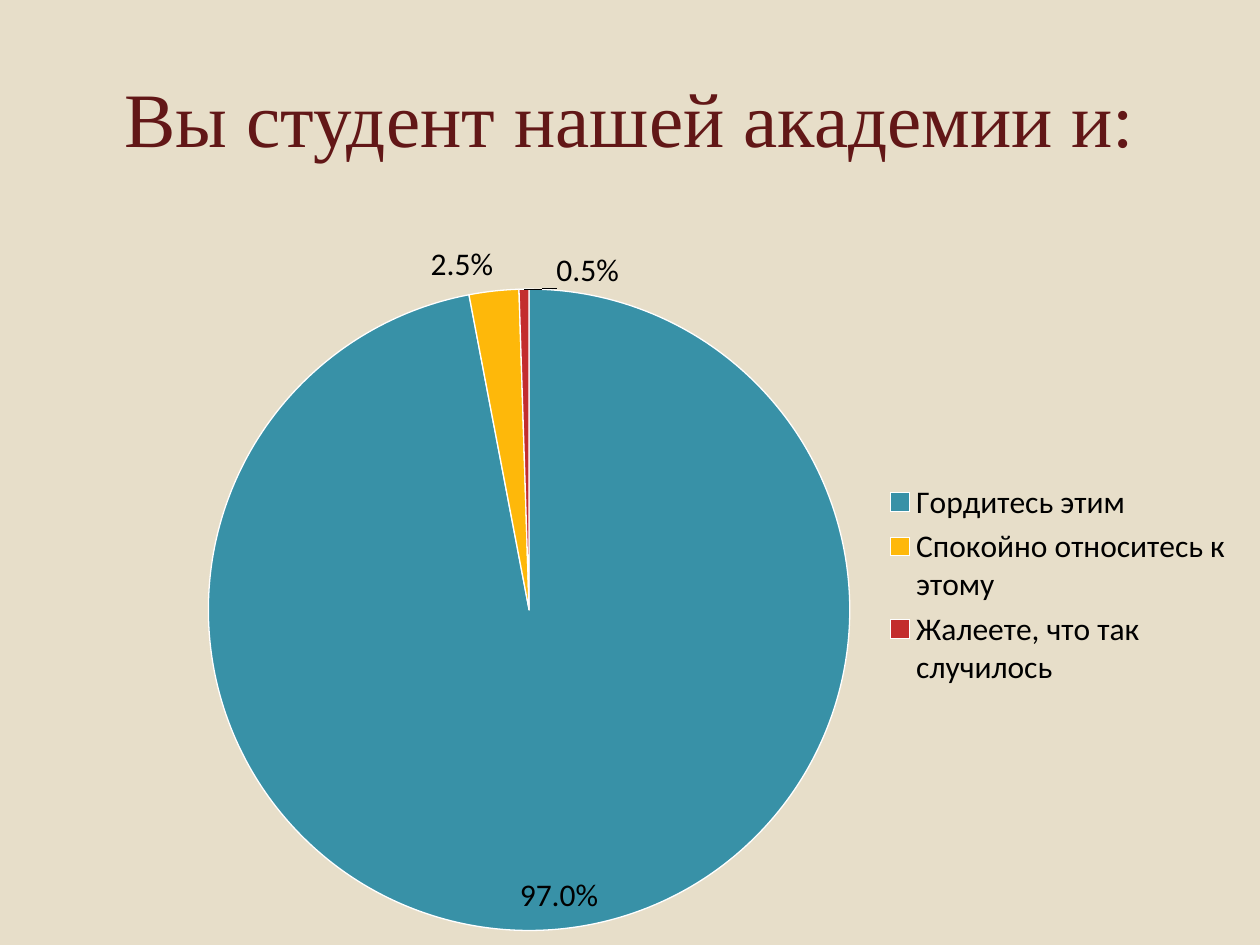
from lxml import etree
from pptx import Presentation
from pptx.chart.data import CategoryChartData
from pptx.dml.color import RGBColor
from pptx.enum.chart import XL_CHART_TYPE, XL_LABEL_POSITION, XL_LEGEND_POSITION
from pptx.enum.text import MSO_ANCHOR, PP_ALIGN
from pptx.oxml import parse_xml
from pptx.oxml.ns import nsdecls, qn
from pptx.util import Inches, Pt

PIE = XL_CHART_TYPE.PIE
BEST_FIT = XL_LABEL_POSITION.BEST_FIT
LEGEND_RIGHT = XL_LEGEND_POSITION.RIGHT
MIDDLE = MSO_ANCHOR.MIDDLE
CENTER = PP_ALIGN.CENTER

SAND = RGBColor(0xE7, 0xDE, 0xC9)
MAROON = RGBColor(0x62, 0x17, 0x17)
TEAL = RGBColor(0x38, 0x91, 0xA7)
AMBER = RGBColor(0xFE, 0xB8, 0x0A)
RED = RGBColor(0xC3, 0x2D, 0x2E)
WHITE = RGBColor(0xFF, 0xFF, 0xFF)
BLACK = RGBColor(0, 0, 0)

PERCENT = "0.0%"
ANSWERS = [
    ("Гордитесь этим", 97, TEAL),
    ("Спокойно относитесь к этому", 2.5, AMBER),
    ("Жалеете, что так случилось", 0.5, RED),
]


def style_font(font, name, size, color):
    font.name = name
    font.size = Pt(size)
    font.color.rgb = color


def manual_layout(**settings):
    """Return a c:layout element; positions are shares of the chart."""
    items = "".join(f'<c:{tag} val="{value}"/>' for tag, value in settings.items())
    return parse_xml(
        f'<c:layout {nsdecls("c")}><c:manualLayout>{items}</c:manualLayout></c:layout>'
    )


def add_question(slide, box):
    title = slide.shapes.title
    title.left, title.top, title.width, title.height = box
    frame = title.text_frame
    frame.vertical_anchor = MIDDLE
    paragraph = frame.paragraphs[0]
    paragraph.alignment = CENTER
    question = paragraph.add_run()
    question.text = "Вы студент нашей академии и:"
    style_font(question.font, "Times New Roman", 44, MAROON)


def label_slices(series):
    """Show percentages and pull the smallest slice's label to the right."""
    labels = series.data_labels
    labels.show_percentage = True
    labels.show_value = False
    labels.number_format = PERCENT
    labels.number_format_is_linked = False
    labels.position = BEST_FIT
    style_font(labels.font, "Calibri", 18, BLACK)

    smallest = series.points[len(ANSWERS) - 1].data_label
    smallest.position = BEST_FIT
    style_font(smallest.font, "Calibri", 18, BLACK)
    label = series.data_labels._element.find(qn("c:dLbl"))
    label.find(qn("c:showVal")).set("val", "0")
    label.find(qn("c:showPercent")).set("val", "1")
    number_format = etree.Element(qn("c:numFmt"), formatCode=PERCENT, sourceLinked="0")
    label.insert(1, manual_layout(x=0.06, y=0.01))
    label.insert(2, number_format)

    leader = labels._element.find(qn("c:showLeaderLines"))
    if leader is None:
        leader = etree.SubElement(labels._element, qn("c:showLeaderLines"))
    leader.set("val", "1")


def add_answers_pie(slide, box):
    data = CategoryChartData()
    data.categories = [answer for answer, _, _ in ANSWERS]
    data.add_series("Series 1", [share for _, share, _ in ANSWERS])
    chart = slide.shapes.add_chart(PIE, *box, data).chart
    chart.has_title = False
    style_font(chart.font, "Calibri", 18, BLACK)

    chart.has_legend = True
    chart.legend.position = LEGEND_RIGHT
    chart.legend.include_in_layout = False
    style_font(chart.legend.font, "Calibri", 18, BLACK)

    plot = chart.plots[0]
    plot.vary_by_categories = True
    series = plot.series[0]
    for index, (_, _, color) in enumerate(ANSWERS):
        piece = series.points[index].format
        piece.fill.solid()
        piece.fill.fore_color.rgb = color
        piece.line.color.rgb = WHITE
        piece.line.width = Pt(0.75)
    label_slices(series)

    plot_area = chart._chartSpace.chart.plotArea
    for automatic in plot_area.findall(qn("c:layout")):
        plot_area.remove(automatic)
    plot_area.insert(0, manual_layout(
        layoutTarget="inner", xMode="edge", yMode="edge",
        x=0.02, y=0.09, w=0.61, h=0.89))


def main():
    deck = Presentation()
    deck.slide_width, deck.slide_height = Inches(10), Inches(7.5)
    slide = deck.slides.add_slide(deck.slide_layouts[5])
    slide.background.fill.solid()
    slide.background.fill.fore_color.rgb = SAND
    add_question(slide, [Inches(n) for n in (0.5, 0.3, 9, 1.25)])
    add_answers_pie(slide, [Inches(n) for n in (1.46, 1.78, 8.43, 5.72)])
    deck.save("out.pptx")


if __name__ == "__main__":
    main()
